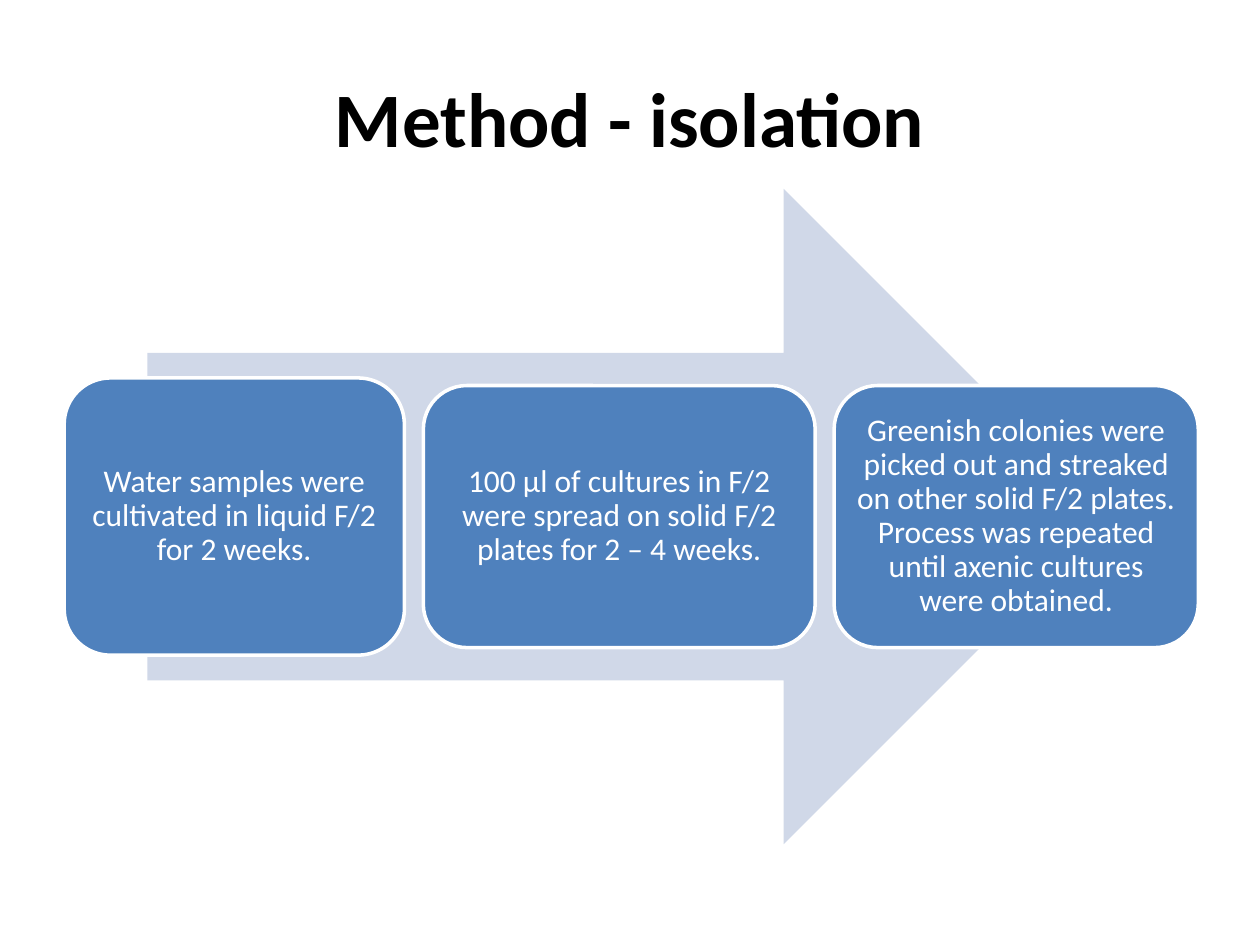
from pptx import Presentation
from pptx.dml.color import RGBColor
from pptx.enum.shapes import MSO_SHAPE
from pptx.enum.text import MSO_ANCHOR, PP_ALIGN
from pptx.util import Inches, Pt

TITLE = "Method - isolation"
# text, width, height
STEPS = [
    ("Water samples were cultivated in liquid F/2 for 2 weeks.", 2.7, 2.2),
    ("100 µl of cultures in F/2 were spread on solid F/2 plates "
     "for 2 – 4 weeks.", 3.11, 2.08),
    ("Greenish colonies were picked out and streaked on other solid F/2 "
     "plates. Process was repeated until axenic cultures were obtained.",
     2.89, 2.08),
]
STEPS_LEFT, GAP, CENTER_Y = 0.51, 0.15, 4.1
ARROW_LEFT, ARROW_WIDTH, ARROW_HEIGHT = 1.17, 7.65, 5.2


def rgb(color):
    return RGBColor.from_string(color)


def write(sp, text, size=18, color="FFFFFF", bold=False, spacing=1.0):
    tf = sp.text_frame
    tf.word_wrap = True
    tf.vertical_anchor = MSO_ANCHOR.MIDDLE
    p = tf.paragraphs[0]
    p.alignment = PP_ALIGN.CENTER
    p.line_spacing = spacing
    r = p.add_run()
    r.text = text
    r.font.name = "Calibri"
    r.font.size = Pt(size)
    r.font.bold = bold
    r.font.color.rgb = rgb(color)


def add_centered(s, kind, left, width, height, fill, line=None):
    """Add a shape whose middle lies on the row's centre line."""
    sp = s.shapes.add_shape(kind, Inches(left), Inches(CENTER_Y - height / 2),
                            Inches(width), Inches(height))
    sp.shadow.inherit = False
    sp.fill.solid()
    sp.fill.fore_color.rgb = rgb(fill)
    if line:
        sp.line.color.rgb = rgb(line)
        sp.line.width = Pt(2)
    else:
        sp.line.fill.background()
    return sp


prs = Presentation()
prs.slide_width, prs.slide_height = Inches(10), Inches(7.5)
s = prs.slides.add_slide(prs.slide_layouts[5])

title = s.shapes.title
title.left, title.top = Inches(0.5), Inches(0.3)
title.width, title.height = Inches(9), Inches(1.25)
write(title, TITLE, size=44, color="000000", bold=True)

add_centered(s, MSO_SHAPE.RIGHT_ARROW, ARROW_LEFT, ARROW_WIDTH, ARROW_HEIGHT,
             "D0D8E8")

left = STEPS_LEFT
for text, width, height in STEPS:
    box = add_centered(s, MSO_SHAPE.ROUNDED_RECTANGLE, left, width, height,
                       "4F81BD", line="FFFFFF")
    tf = box.text_frame
    tf.margin_left = tf.margin_right = Inches(0.07)
    tf.margin_top = tf.margin_bottom = Inches(0.07)
    write(box, text, spacing=0.9)
    left += width + GAP

prs.save("out.pptx")
